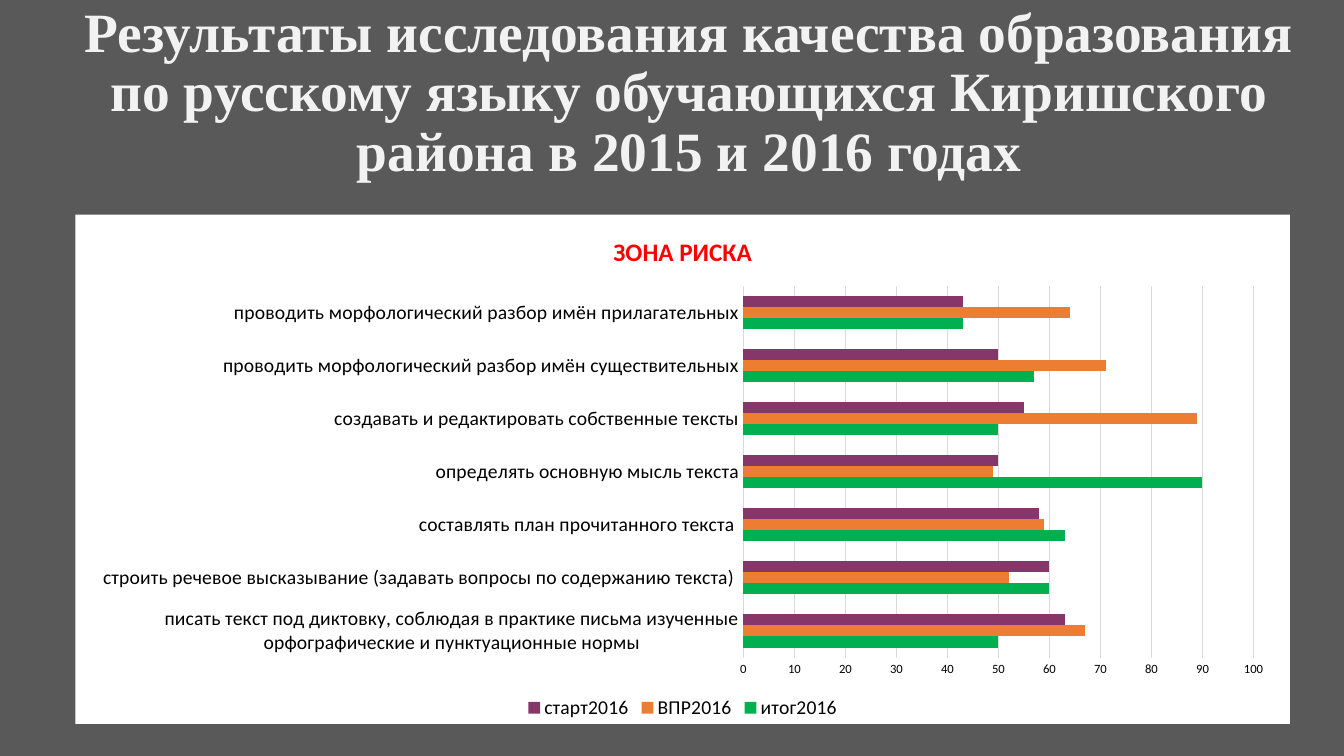
import pptx
import pptx.chart.data
import pptx.dml.color
import pptx.enum.chart
import pptx.enum.text
import pptx.oxml
import pptx.util
from pptx.util import Cm, Pt

RGBColor = pptx.dml.color.RGBColor
BACKGROUND = RGBColor(0x59, 0x59, 0x59)
HEADING = RGBColor(0xF2, 0xF2, 0xF2)
BLACK = RGBColor(0, 0, 0)
RED = RGBColor(0xFF, 0, 0)
GRID = RGBColor(0xD9, 0xD9, 0xD9)
GREEN = RGBColor(0, 0xB0, 0x50)
ORANGE = RGBColor(0xED, 0x7D, 0x31)
PURPLE = RGBColor(0x86, 0x36, 0x69)

NAMESPACES = (
    'xmlns:c="http://schemas.openxmlformats.org/drawingml/2006/chart" '
    'xmlns:a="http://schemas.openxmlformats.org/drawingml/2006/main"'
)
HEADING_TEXT = (
    "Результаты исследования качества образования по русскому языку "
    "обучающихся Киришского района в 2015 и 2016 годах"
)
SKILLS = [
    "писать текст под диктовку, соблюдая в практике письма изученные "
    "орфографические и пунктуационные нормы",
    "строить речевое высказывание (задавать вопросы по содержанию текста) ",
    "составлять план прочитанного текста ",
    "определять основную мысль текста",
    "создавать и редактировать собственные тексты",
    "проводить морфологический разбор имён существительных",
    "проводить морфологический разбор имён прилагательных",
]
RESULTS = [
    ("итог2016", GREEN, (50, 60, 63, 90, 50, 57, 43)),
    ("ВПР2016", ORANGE, (67, 52, 59, 49, 89, 71, 64)),
    ("старт2016", PURPLE, (63, 60, 58, 50, 55, 50, 43)),
]


def set_format(target, values):
    for name, value in values.items():
        setattr(target, name, value)


def set_font(font, color, **values):
    set_format(font, values)
    font.color.rgb = color


def add_heading(page, left, top, width, height):
    box = page.shapes.add_textbox(left, top, width, height)
    set_format(box.text_frame, {
        "word_wrap": True,
        "vertical_anchor": pptx.enum.text.MSO_ANCHOR.MIDDLE,
    })
    para = box.text_frame.paragraphs[0]
    set_format(para, {"alignment": pptx.enum.text.PP_ALIGN.CENTER, "line_spacing": 0.9})
    span = para.add_run()
    span.text = HEADING_TEXT
    set_font(span.font, HEADING, name="Times New Roman", size=Pt(39.6), bold=True)


def fill_chart_white(chart):
    area = pptx.oxml.parse_xml(
        f'<c:spPr {NAMESPACES}><a:solidFill><a:srgbClr val="FFFFFF"/></a:solidFill>'
        "<a:ln><a:noFill/></a:ln></c:spPr>"
    )
    chart._chartSpace.chart.addnext(area)


def place_plot(chart, x, y, w, h):
    """Fix the inner plot area, given as fractions of the chart."""
    sizes = "".join(
        f'<c:{tag} val="{value}"/>' for tag, value in zip("xywh", (x, y, w, h))
    )
    layout = pptx.oxml.parse_xml(
        f'<c:layout {NAMESPACES}><c:manualLayout><c:layoutTarget val="inner"/>'
        f'<c:xMode val="edge"/><c:yMode val="edge"/>{sizes}</c:manualLayout></c:layout>'
    )
    plot_area = chart._chartSpace.chart.plotArea
    for old in plot_area.xpath("c:layout"):
        plot_area.remove(old)
    plot_area.insert(0, layout)


def format_axes(chart):
    no_tick = pptx.enum.chart.XL_TICK_MARK.NONE
    for axis, size in ((chart.category_axis, 14), (chart.value_axis, 9)):
        set_format(axis, {"major_tick_mark": no_tick, "minor_tick_mark": no_tick})
        set_font(axis.tick_labels.font, BLACK, name="Calibri", size=Pt(size))
    set_format(chart.value_axis, {
        "minimum_scale": 0, "maximum_scale": 100, "major_unit": 10,
        "has_major_gridlines": True,
    })
    chart.value_axis.format.line.fill.background()
    for line in (chart.category_axis.format.line,
                 chart.value_axis.major_gridlines.format.line):
        line.width = Pt(0.75)
        line.color.rgb = GRID


def add_risk_chart(page, left, top, width, height):
    chart_data = pptx.chart.data.CategoryChartData()
    chart_data.categories = SKILLS
    for name, _, values in RESULTS:
        chart_data.add_series(name, values)
    chart = page.shapes.add_chart(
        pptx.enum.chart.XL_CHART_TYPE.BAR_CLUSTERED, left, top, width, height, chart_data
    ).chart
    set_font(chart.font, BLACK, name="Calibri", size=Pt(10))
    fill_chart_white(chart)
    place_plot(chart, 0.55, 0.14, 0.42, 0.73)

    chart.has_title = True
    chart.chart_title.include_in_layout = False
    span = chart.chart_title.text_frame.paragraphs[0].add_run()
    span.text = "ЗОНА РИСКА"
    set_font(span.font, RED, name="Calibri", size=Pt(18), bold=True)

    set_format(chart.plots[0], {"gap_width": 182, "overlap": 0, "vary_by_categories": False})
    for series, (_, color, _) in zip(chart.plots[0].series, RESULTS):
        series.format.fill.solid()
        series.format.fill.fore_color.rgb = color
    format_axes(chart)

    chart.has_legend = True
    set_format(chart.legend, {
        "position": pptx.enum.chart.XL_LEGEND_POSITION.BOTTOM,
        "include_in_layout": False,
    })
    set_font(chart.legend.font, BLACK, name="Calibri", size=Pt(14))


def main():
    deck = pptx.Presentation()
    set_format(deck, {"slide_width": Cm(33.87), "slide_height": Cm(19.05)})
    page = deck.slides.add_slide(deck.slide_layouts[6])
    page.background.fill.solid()
    page.background.fill.fore_color.rgb = BACKGROUND
    add_heading(page, Cm(1.47), Cm(0.53), Cm(31.78), Cm(3.68))
    add_risk_chart(page, Cm(1.9), Cm(5.41), Cm(30.61), Cm(12.83))
    deck.save("out.pptx")


if __name__ == "__main__":
    main()
